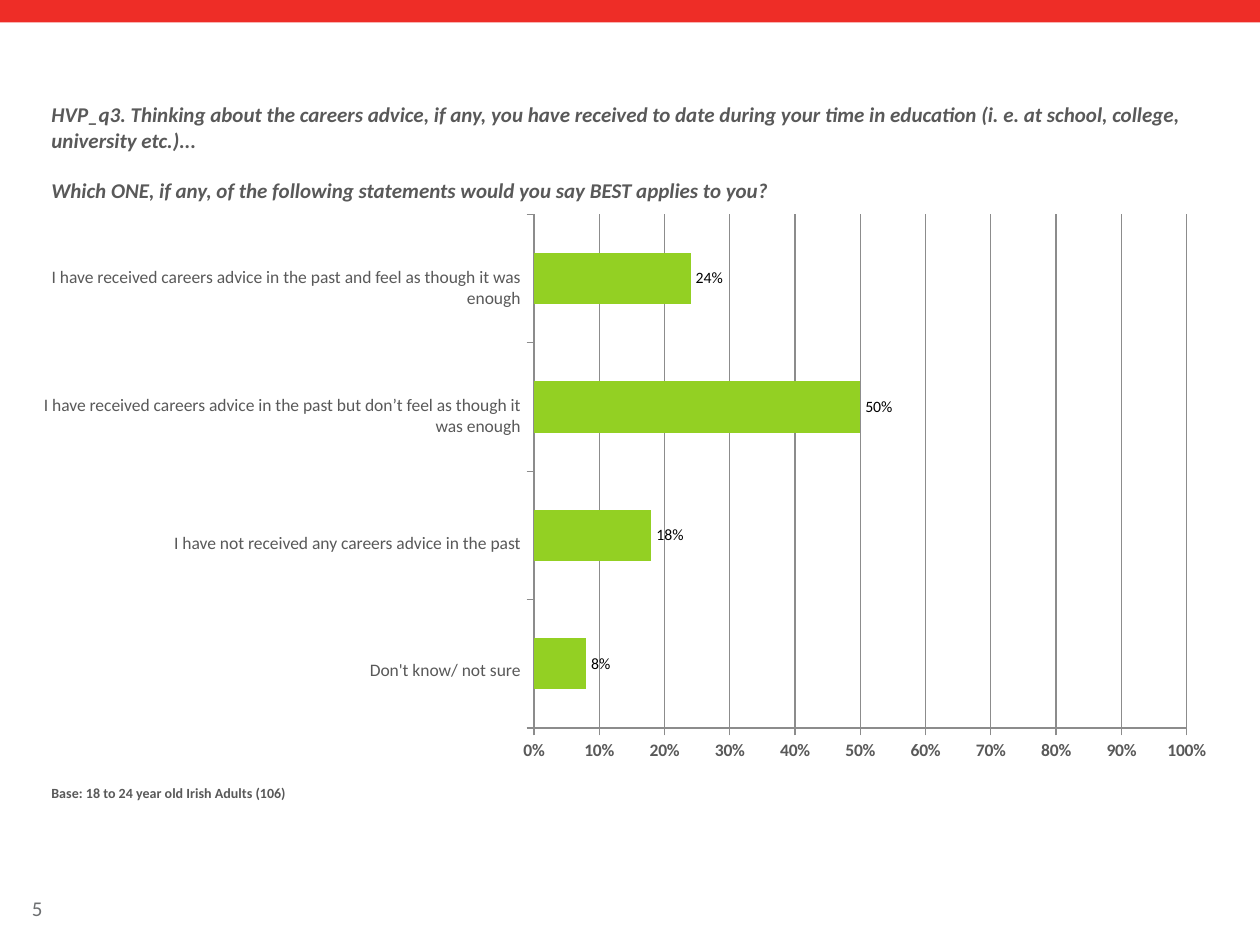
"""Build the survey slide on careers advice, with a bar chart."""
import pptx
import pptx.chart.data
import pptx.dml.color
import pptx.enum.chart
import pptx.enum.shapes
import pptx.enum.text
import pptx.oxml
import pptx.oxml.ns
import pptx.util

Pt = pptx.util.Pt
RGB = pptx.dml.color.RGBColor
TICK = pptx.enum.chart.XL_TICK_MARK
SPOT = pptx.enum.chart.XL_TICK_LABEL_POSITION
ALIGN = pptx.enum.text.PP_ALIGN
ANCHOR = pptx.enum.text.MSO_ANCHOR

RED = RGB(0xEE, 0x2D, 0x27)
GREEN = RGB(0x93, 0xD0, 0x23)
DARK = RGB(0x59, 0x59, 0x59)
GREY = RGB(0x6D, 0x6F, 0x71)
LINE = RGB(0x8C, 0x8C, 0x8C)
BLACK = RGB(0, 0, 0)

TITLE = [
    "HVP_q3. Thinking about the careers advice, if any, you have received to date "
    "during your time in education (i. e. at school, college, university etc.)...",
    "Which ONE, if any, of the following statements would you say BEST applies to you?",
]
BASE = "Base: 18 to 24 year old Irish Adults (106)"
ROWS = [
    ("I have received careers advice in the past and feel as though it was enough", 0.24),
    ("I have received careers advice in the past but don’t feel as though it was enough", 0.5),
    ("I have not received any careers advice in the past", 0.18),
    ("Don't know/ not sure", 0.08),
]
ROW_TOP = 127.6
ROW_STEP = 72.9


def set_font(font, size, color=DARK, bold=False, slant=False, name="Calibri"):
    font.name = name
    font.size = Pt(size)
    font.bold = bold
    font.italic = slant
    font.color.rgb = color


def add_bar(slide, width, height):
    bar = slide.shapes.add_shape(
        pptx.enum.shapes.MSO_SHAPE.RECTANGLE, 0, 0, Pt(width), Pt(height))
    bar.shadow.inherit = False
    bar.fill.solid()
    bar.fill.fore_color.rgb = RED
    bar.line.fill.background()


def add_text(slide, spot, lines, size, align=ALIGN.LEFT, anchor=ANCHOR.TOP, gap=0, **style):
    box = slide.shapes.add_textbox(*map(Pt, spot))
    frame = box.text_frame
    frame.word_wrap = True
    frame.vertical_anchor = anchor
    for i, line in enumerate(lines):
        para = frame.add_paragraph() if i else frame.paragraphs[0]
        para.alignment = align
        if i:
            para.space_before = Pt(gap)
        run = para.add_run()
        run.text = line
        set_font(run.font, size, **style)


def set_line(line):
    line.color.rgb = LINE
    line.width = Pt(0.75)


def place_plot(chart, left, top, width, height):
    plot = chart.plots[0]._element.getparent()
    for old in plot.findall(pptx.oxml.ns.qn("c:layout")):
        plot.remove(old)
    sizes = zip("xywh", (left, top, width, height))
    parts = "".join(f'<c:{key} val="{size}"/>' for key, size in sizes)
    plot.insert(0, pptx.oxml.parse_xml(
        f'<c:layout {pptx.oxml.ns.nsdecls("c")}><c:manualLayout>'
        '<c:layoutTarget val="inner"/><c:xMode val="edge"/><c:yMode val="edge"/>'
        f'{parts}</c:manualLayout></c:layout>'))


def add_chart(slide, spot):
    data = pptx.chart.data.CategoryChartData(number_format="0%")
    data.categories = [str(i + 1) for i in range(len(ROWS))]
    data.add_series("Series 1", [share for _, share in reversed(ROWS)])
    chart = slide.shapes.add_chart(
        pptx.enum.chart.XL_CHART_TYPE.BAR_CLUSTERED, *map(Pt, spot), data).chart
    chart.has_legend = False
    chart.has_title = False
    set_font(chart.font, 18, GREY, name="Manrope")
    place_plot(chart, 0.03, 0.02, 0.92, 0.9)

    plot = chart.plots[0]
    plot.vary_by_categories = False
    plot.gap_width = 150
    plot.overlap = -10
    bars = plot.series[0]
    bars.format.fill.solid()
    bars.format.fill.fore_color.rgb = GREEN
    tags = bars.data_labels
    tags.show_value = True
    tags.number_format = "0%"
    tags.number_format_is_linked = False
    tags.position = pptx.enum.chart.XL_LABEL_POSITION.OUTSIDE_END
    set_font(tags.font, 9, BLACK)

    cats, vals = chart.category_axis, chart.value_axis
    for axis in (cats, vals):
        axis.major_tick_mark = TICK.OUTSIDE
        axis.minor_tick_mark = TICK.NONE
        set_line(axis.format.line)
    cats.has_major_gridlines = False
    cats.tick_label_position = SPOT.NONE
    vals.minimum_scale, vals.maximum_scale, vals.major_unit = 0, 1, 0.1
    vals.has_major_gridlines = True
    set_line(vals.major_gridlines.format.line)
    vals.tick_label_position = SPOT.LOW
    vals.tick_labels.number_format = "0%"
    vals.tick_labels.number_format_is_linked = False
    set_font(vals.tick_labels.font, 10, bold=True)


def main():
    deck = pptx.Presentation()
    deck.slide_width, deck.slide_height = Pt(720), Pt(540)
    slide = deck.slides.add_slide(deck.slide_layouts[6])
    add_bar(slide, 720, 12.8)
    add_text(slide, (11.2, 508.4, 55.4, 21.6), ["5"], 12, anchor=ANCHOR.MIDDLE, color=GREY)
    add_text(slide, (22.3, 54.7, 676, 61.2), TITLE, 12, gap=14.4, bold=True, slant=True)
    add_chart(slide, (293, 116, 405.4, 326.2))
    for i, (label, _) in enumerate(ROWS):
        spot = (11.5, ROW_TOP + i * ROW_STEP, 293, ROW_STEP)
        add_text(slide, spot, [label], 10, ALIGN.RIGHT, ANCHOR.MIDDLE)
    add_text(slide, (22.3, 445, 676, 31), [BASE], 8, bold=True)
    deck.save("out.pptx")


if __name__ == "__main__":
    main()
